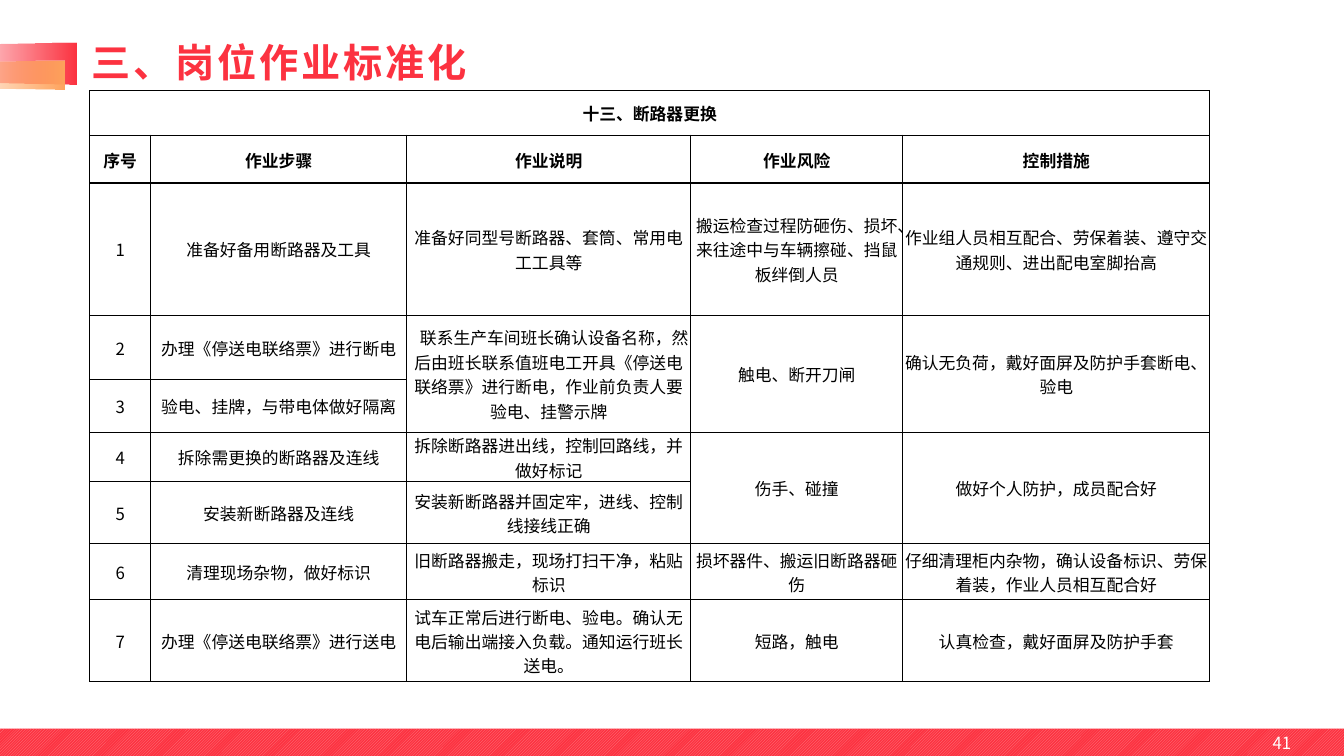
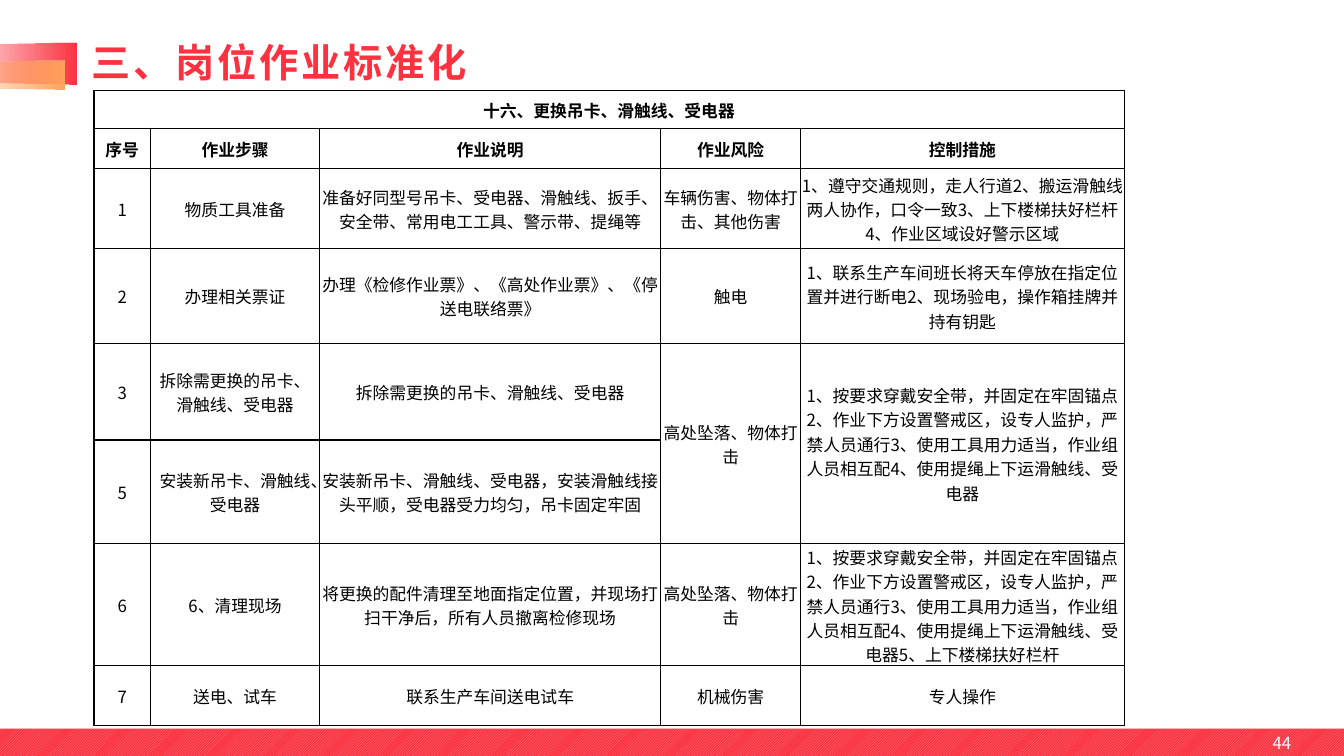
"""Build two job-standard slides, each with a titled table of work steps."""
from dataclasses import dataclass
from typing import Optional

from lxml.etree import SubElement
from pptx import Presentation
from pptx.dml.color import RGBColor
from pptx.enum.dml import MSO_PATTERN
from pptx.enum.lang import MSO_LANGUAGE_ID
from pptx.enum.shapes import MSO_SHAPE
from pptx.enum.text import MSO_ANCHOR, MSO_AUTO_SIZE, PP_ALIGN
from pptx.oxml.ns import qn
from pptx.util import Cm, Pt

RED = RGBColor(0xFC, 0x32, 0x40)
PINK = RGBColor(0xFD, 0x84, 0x8C)
ORANGE = RGBColor(0xFF, 0xA4, 0x5D)
BLACK = RGBColor(0, 0, 0)
WHITE = RGBColor(0xFF, 0xFF, 0xFF)
HEAD_FONT = "Noto Sans CJK JP"
CELL_FONT = "Noto Sans CJK SC"
TITLE = "三、岗位作业标准化"
HEADS = ("序号", "作业步骤", "作业说明", "作业风险", "控制措施")
TOP = 2.29


@dataclass
class Tab:
    left: float
    top: float
    width: float
    height: float
    color: RGBColor


@dataclass
class Sheet:
    page: str
    name: str
    left: float
    cols: tuple
    highs: tuple
    rows: tuple
    indent: Optional[tuple] = None


TABS = (
    Tab(-0.3, -0.1, 1.04, 3.4, RED),
    Tab(-0.23, 0.41, 0.74, 2.95, ORANGE),
)

SAFE = ("1、按要求穿戴安全带，并固定在牢固锚点2、作业下方设置警戒区，设专人监护，"
        "严禁人员通行3、使用工具用力适当，作业组人员相互配4、使用提绳上下运滑触线、受电器")

SHEETS = (
    Sheet(
        "41", "十三、断路器更换", 2.26,
        (1.54, 6.45, 7.16, 5.34, 7.74),
        (1.12, 1.2, 3.33, 1.63, 1.32, 1.25, 1.55, 1.42, 2.06),
        (
            ("1", "准备好备用断路器及工具", "准备好同型号断路器、套筒、常用电工工具等",
             "搬运检查过程防砸伤、损坏、来往途中与车辆擦碰、挡鼠板绊倒人员",
             "作业组人员相互配合、劳保着装、遵守交通规则、进出配电室脚抬高"),
            ("2", "办理《停送电联络票》进行断电",
             "联系生产车间班长确认设备名称，然后由班长联系值班电工开具"
             "《停送电联络票》进行断电，作业前负责人要验电、挂警示牌",
             "触电、断开刀闸", "确认无负荷，戴好面屏及防护手套断电、验电"),
            ("3", "验电、挂牌，与带电体做好隔离", None, None, None),
            ("4", "拆除需更换的断路器及连线", "拆除断路器进出线，控制回路线，并做好标记",
             "伤手、碰撞", "做好个人防护，成员配合好"),
            ("5", "安装新断路器及连线", "安装新断路器并固定牢，进线、控制线接线正确",
             None, None),
            ("6", "清理现场杂物，做好标识", "旧断路器搬走，现场打扫干净，粘贴标识",
             "损坏器件、搬运旧断路器砸伤",
             "仔细清理柜内杂物，确认设备标识、劳保着装，作业人员相互配合好"),
            ("7", "办理《停送电联络票》进行送电",
             "试车正常后进行断电、验电。确认无电后输出端接入负载。通知运行班长送电。",
             "短路，触电", "认真检查，戴好面屏及防护手套"),
        ),
        (3, 2),
    ),
    Sheet(
        "44", "十六、更换吊卡、滑触线、受电器", 2.37,
        (1.42, 4.27, 8.59, 3.53, 8.15),
        (0.94, 1.02, 2.01, 2.39, 2.44, 2.61, 3.07, 1.52),
        (
            ("1", "物质工具准备",
             "准备好同型号吊卡、受电器、滑触线、扳手、安全带、常用电工工具、警示带、提绳等",
             "车辆伤害、物体打击、其他伤害",
             "1、遵守交通规则，走人行道2、搬运滑触线两人协作，口令一致"
             "3、上下楼梯扶好栏杆4、作业区域设好警示区域"),
            ("2", "办理相关票证", "办理《检修作业票》、《高处作业票》、《停送电联络票》",
             "触电",
             "1、联系生产车间班长将天车停放在指定位置并进行断电"
             "2、现场验电，操作箱挂牌并持有钥匙"),
            ("3", "拆除需更换的吊卡、滑触线、受电器", "拆除需更换的吊卡、滑触线、受电器",
             "高处坠落、物体打击", SAFE),
            ("5", "安装新吊卡、滑触线、受电器",
             "安装新吊卡、滑触线、受电器，安装滑触线接头平顺，受电器受力均匀，吊卡固定牢固",
             None, None),
            ("6", "6、清理现场",
             "将更换的配件清理至地面指定位置，并现场打扫干净后，所有人员撤离检修现场",
             "高处坠落、物体打击", SAFE + "5、上下楼梯扶好栏杆"),
            ("7", "送电、试车", "联系生产车间送电试车", "机械伤害", "专人操作"),
        ),
    ),
)


def add_run(para, text: str, face: str, size: int, color: RGBColor, bold: bool = False):
    """Add one styled run to a paragraph."""
    run = para.add_run()
    run.text = text
    font = run.font
    font.size, font.bold, font.name = Pt(size), bold, face
    font.color.rgb = color
    font.language_id = MSO_LANGUAGE_ID.SIMPLIFIED_CHINESE
    SubElement(font._element, qn("a:ea")).set("typeface", face)
    return run


def add_tab(group, tab: Tab) -> None:
    """Draw a turned trapezoid that fades out to the left."""
    shape = group.shapes.add_shape(
        MSO_SHAPE.TRAPEZOID, Cm(tab.left), Cm(tab.top), Cm(tab.width), Cm(tab.height))
    shape.rotation = 270
    shape.adjustments[0] = 0.07
    shape.shadow.inherit = False
    shape.line.fill.background()
    shape.fill.gradient()
    shape.fill.gradient_angle = 270
    for stop, place in zip(shape.fill.gradient_stops, (0, 1)):
        stop.color.rgb = tab.color
        stop.position = place
    clear = next(shape._element.spPr.iter(qn("a:srgbClr")))
    SubElement(clear, qn("a:alpha")).set("val", "0")


def add_frame(slide, page: str) -> None:
    """Draw the title, corner tabs, bottom band and page number."""
    title = slide.shapes.title
    title.left, title.top = Cm(2.06), Cm(0.97)
    title.width, title.height = Cm(20.22), Cm(1.32)
    frame = title.text_frame
    frame.vertical_anchor = MSO_ANCHOR.MIDDLE
    frame.auto_size = MSO_AUTO_SIZE.SHAPE_TO_FIT_TEXT
    para = frame.paragraphs[0]
    para.alignment, para.line_spacing = PP_ALIGN.LEFT, 0.9
    run = add_run(para, TITLE, HEAD_FONT, 28, RED, True)
    run.font._element.set("spc", "200")

    group = slide.shapes.add_group_shape()
    for tab in TABS:
        add_tab(group, tab)

    band = slide.shapes.add_shape(
        MSO_SHAPE.RECTANGLE, Cm(-0.02), Cm(18.36), Cm(33.89), Cm(0.7))
    band.shadow.inherit = False
    band.line.fill.background()
    band.fill.patterned()
    band.fill.pattern = MSO_PATTERN.DARK_UPWARD_DIAGONAL
    band.fill.fore_color.rgb, band.fill.back_color.rgb = PINK, RED

    box = slide.shapes.add_textbox(Cm(25.17), Cm(18.21), Cm(7.62), Cm(1.02))
    box.text_frame.word_wrap = True
    box.text_frame.vertical_anchor = MSO_ANCHOR.MIDDLE
    para = box.text_frame.paragraphs[0]
    para.alignment = PP_ALIGN.RIGHT
    add_run(para, page, HEAD_FONT, 12, WHITE)


def style_cell(cell) -> None:
    """Give a cell thin black borders, tight margins and no fill."""
    props = cell._tc.get_or_add_tcPr()
    for side in ("lnL", "lnR", "lnT", "lnB"):
        line = SubElement(props, qn(f"a:{side}"), w=str(Pt(1)))
        fill = SubElement(line, qn("a:solidFill"))
        SubElement(fill, qn("a:srgbClr")).set("val", str(BLACK))
    cell.fill.background()
    cell.margin_left = cell.margin_right = cell.margin_top = Cm(0.03)
    cell.margin_bottom = Cm(0)
    cell.vertical_anchor = MSO_ANCHOR.MIDDLE


def add_grid(slide, sheet: Sheet) -> None:
    """Draw the table, where None joins a cell to the one above."""
    blank = ("",) * (len(HEADS) - 1)
    rows = ((sheet.name, *blank), HEADS, *sheet.rows)
    table = slide.shapes.add_table(
        len(rows), len(HEADS), Cm(sheet.left), Cm(TOP),
        Cm(sum(sheet.cols)), Cm(sum(sheet.highs))).table
    table.first_row = table.horz_banding = False
    for col, width in zip(table.columns, sheet.cols):
        col.width = Cm(width)
    for row, height in zip(table.rows, sheet.highs):
        row.height = Cm(height)
    for i, texts in enumerate(rows):
        for j, text in enumerate(texts):
            cell = table.cell(i, j)
            style_cell(cell)
            if text is None:
                table.cell(i - 1, j).merge(cell)
            elif text:
                para = cell.text_frame.paragraphs[0]
                para.alignment = PP_ALIGN.CENTER
                if (i, j) == sheet.indent:
                    para._p.get_or_add_pPr().set("indent", str(Cm(0.28)))
                add_run(para, text, CELL_FONT, 12, BLACK, i < 2)
    table.cell(0, 0).merge(table.cell(0, len(HEADS) - 1))


def main() -> None:
    """Build and save the deck."""
    deck = Presentation()
    deck.slide_width, deck.slide_height = Cm(33.87), Cm(19.05)
    for sheet in SHEETS:
        slide = deck.slides.add_slide(deck.slide_layouts[5])
        add_frame(slide, sheet.page)
        add_grid(slide, sheet)
    deck.save("out.pptx")


if __name__ == "__main__":
    main()
